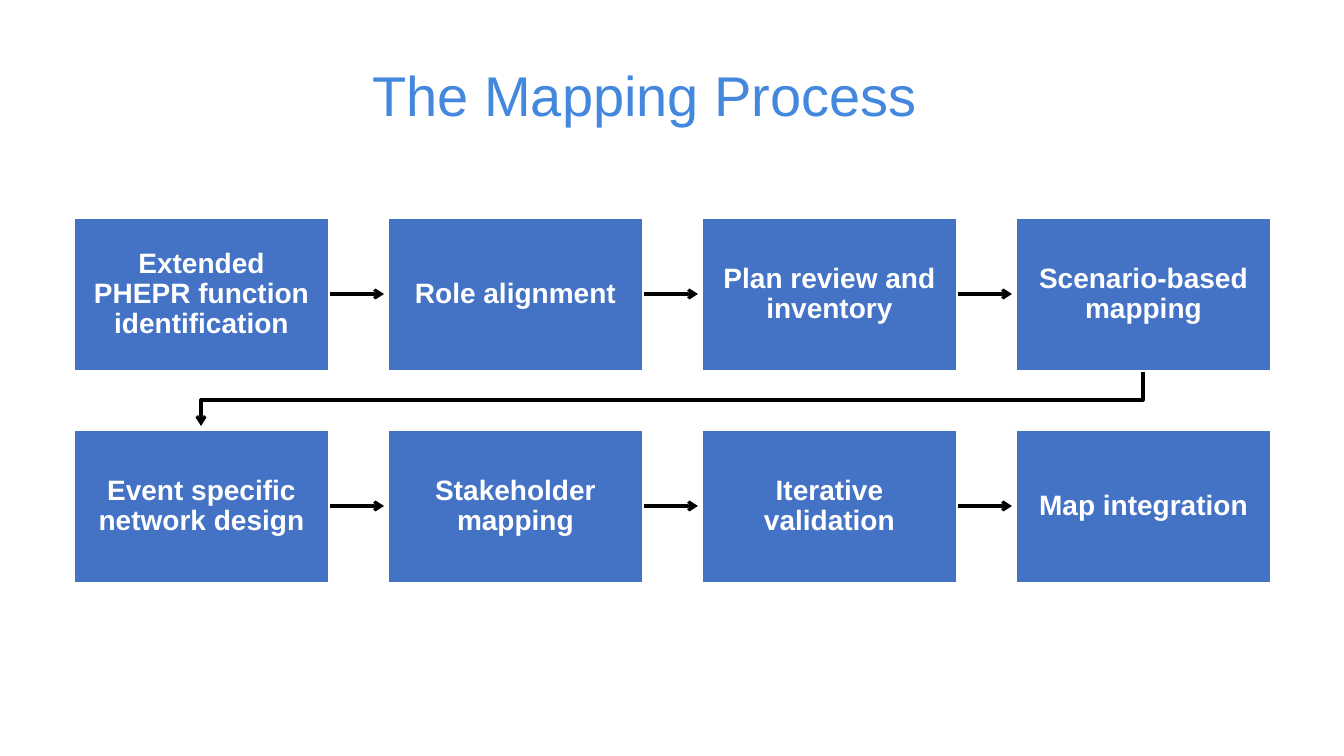
from dataclasses import dataclass

from pptx import Presentation
from pptx.dml.color import RGBColor
from pptx.enum.shapes import MSO_CONNECTOR, MSO_SHAPE
from pptx.enum.text import MSO_ANCHOR, MSO_AUTO_SIZE, PP_ALIGN
from pptx.oxml.ns import qn
from pptx.util import Pt
from lxml.etree import SubElement


@dataclass(frozen=True)
class Theme:
    font: str = "Arial"
    title: RGBColor = RGBColor(0x44, 0x88, 0xDD)
    box: RGBColor = RGBColor(0x44, 0x72, 0xC4)
    white: RGBColor = RGBColor(0xFF, 0xFF, 0xFF)
    arrow: RGBColor = RGBColor(0, 0, 0)
    title_size: float = 40
    step_size: float = 20
    arrow_width: float = 2.25
    box_line: float = 1


@dataclass(frozen=True)
class Step:
    text: str
    row: int
    col: int

    @property
    def left(self) -> int:
        return LEFT + self.col * COL_PITCH

    @property
    def top(self) -> int:
        return TOP + self.row * ROW_PITCH

    @property
    def center_x(self) -> int:
        return self.left + BOX_W // 2

    @property
    def center_y(self) -> int:
        return self.top + BOX_H // 2


THEME = Theme()
SLIDE_W, SLIDE_H = 1344, 756
EMU_PER_PX = 12192000 / SLIDE_W
LEFT, TOP = 74, 218
BOX_W, BOX_H = 255, 153
COL_PITCH, ROW_PITCH = 314, 212
COLS = 4
INSET = 16
ARROW_GAP = 4
TURN_DROP = 29

NAMES = [
    "Extended PHEPR function identification",
    "Role alignment",
    "Plan review and inventory",
    "Scenario-based mapping",
    "Event specific network design",
    "Stakeholder mapping",
    "Iterative validation",
    "Map integration",
]
STEPS = [Step(name, *divmod(i, COLS)) for i, name in enumerate(NAMES)]


def px(n: int) -> int:
    return round(n * EMU_PER_PX)


def write(tf, text: str, size: float, color: RGBColor, bold: bool) -> None:
    tf.word_wrap = True
    tf.auto_size = MSO_AUTO_SIZE.NONE
    tf.vertical_anchor = MSO_ANCHOR.MIDDLE
    p = tf.paragraphs[0]
    p.alignment = PP_ALIGN.CENTER
    p.line_spacing = 0.9
    r = p.add_run()
    r.text = text
    r.font.name = THEME.font
    r.font.size = Pt(size)
    r.font.bold = bold
    r.font.color.rgb = color


def add_title(slide, text: str) -> None:
    sp = slide.shapes.title
    sp.left, sp.top, sp.width, sp.height = px(68), px(25), px(1153), px(146)
    write(sp.text_frame, text, THEME.title_size, THEME.title, False)


def style_arrow(line) -> None:
    line.color.rgb = THEME.arrow
    line.width = Pt(THEME.arrow_width)
    SubElement(line._get_or_add_ln(), qn("a:tailEnd"), type="arrow")


def add_arrow(slide, start: Step, end: Step) -> None:
    """Join neighbours straight, and steps on different rows with two turns."""
    if start.row == end.row:
        y = px(start.center_y)
        cx = slide.shapes.add_connector(
            MSO_CONNECTOR.STRAIGHT,
            px(start.left + BOX_W), y, px(end.left - ARROW_GAP), y)
        style_arrow(cx.line)
        SubElement(cx._element.spPr, qn("a:effectLst"))
        return
    bottom = start.top + BOX_H
    turn = bottom + TURN_DROP
    fb = slide.shapes.build_freeform(
        start.center_x, bottom, scale=EMU_PER_PX)
    fb.add_line_segments(
        [(start.center_x, turn), (end.center_x, turn),
         (end.center_x, end.top - ARROW_GAP)], close=False)
    sp = fb.convert_to_shape()
    sp.shadow.inherit = False
    sp.fill.background()
    style_arrow(sp.line)


def add_step(slide, step: Step) -> None:
    sp = slide.shapes.add_shape(
        MSO_SHAPE.RECTANGLE,
        px(step.left), px(step.top), px(BOX_W), px(BOX_H))
    sp.shadow.inherit = False
    sp.fill.solid()
    sp.fill.fore_color.rgb = THEME.box
    sp.line.color.rgb = THEME.white
    sp.line.width = Pt(THEME.box_line)
    tf = sp.text_frame
    tf.margin_left = tf.margin_right = px(INSET)
    tf.margin_top = tf.margin_bottom = px(INSET)
    write(tf, step.text, THEME.step_size, THEME.white, True)


def main() -> None:
    prs = Presentation()
    prs.slide_width, prs.slide_height = px(SLIDE_W), px(SLIDE_H)
    slide = prs.slides.add_slide(prs.slide_layouts.get_by_name("Title Only"))
    add_title(slide, "The Mapping Process")
    for start, end in zip(STEPS, STEPS[1:]):
        add_arrow(slide, start, end)
    for step in STEPS:
        add_step(slide, step)
    prs.save("out.pptx")


if __name__ == "__main__":
    main()
